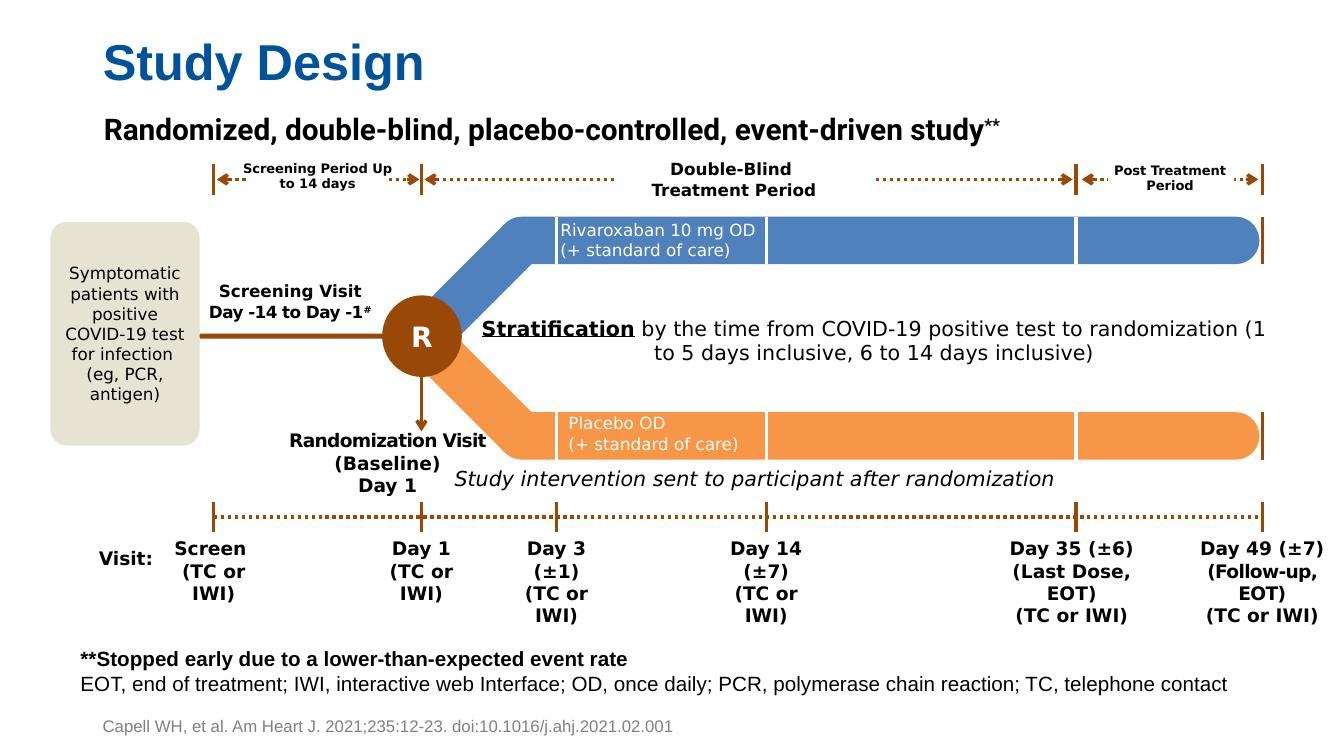
"""Build the study design slide."""
from dataclasses import dataclass
from typing import NamedTuple

from lxml.etree import SubElement as Sub
from pptx import Presentation
from pptx.dml.color import RGBColor
from pptx.enum.dml import MSO_LINE as Dash
from pptx.enum.shapes import MSO_CONNECTOR as Conn, MSO_SHAPE as Form
from pptx.enum.text import MSO_ANCHOR as Anchor, MSO_AUTO_SIZE as Fit, PP_ALIGN as Align
from pptx.oxml.ns import qn
from pptx.shapes.autoshape import Shape
from pptx.slide import Slide
from pptx.text.text import TextFrame
from pptx.util import Inches, Pt

BLACK = RGBColor(0x00, 0x00, 0x00)
WHITE = RGBColor(0xFF, 0xFF, 0xFF)
NAVY = RGBColor(0x00, 0x53, 0x9B)
GRAY = RGBColor(0x80, 0x80, 0x80)
BROWN = RGBColor(0x98, 0x48, 0x07)
BLUE = RGBColor(0x4F, 0x81, 0xBD)
ORANGE = RGBColor(0xF7, 0x96, 0x46)
SAND = RGBColor(0xE6, 0xE3, 0xD2)
SANS, ARIAL, ROBOTO = "DejaVu Sans", "Arial", "Roboto"
MID, LEFT = Align.CENTER, Align.LEFT

SCREEN, DAY1, DAY3, DAY14, DAY35, DAY49 = 2.12, 4.18, 5.52, 7.6, 10.67, 12.52
TICK, BAR = 0.3, 0.47


class Area(NamedTuple):
    left: float
    top: float
    width: float
    height: float


class Bit(NamedTuple):
    text: str
    bold: bool = False
    under: bool = False
    slant: bool = False
    space: float = 0
    lift: int = 0


@dataclass
class Style:
    size: float
    font: str = SANS
    color: RGBColor = BLACK
    align: Align = MID


@dataclass
class Note:
    area: Area
    style: Style
    rows: list[list[Bit]]


@dataclass
class Phase:
    start: float
    end: float
    mask: Area
    note: Note


@dataclass
class Arm:
    top: float
    slant_top: float
    angle: int
    color: RGBColor


def bold(*rows: str) -> list[list[Bit]]:
    return [[Bit(row, bold=True)] for row in rows]


def plain(*rows: str) -> list[list[Bit]]:
    return [[Bit(row)] for row in rows]


def write(frame: TextFrame, style: Style, rows: list[list[Bit]]) -> None:
    for index, row in enumerate(rows):
        para = frame.add_paragraph() if index else frame.paragraphs[0]
        para.alignment = style.align
        for bit in row:
            run = para.add_run()
            run.text = bit.text
            font = run.font
            font.name, font.size = style.font, Pt(style.size)
            font.color.rgb = style.color
            font.bold, font.italic, font.underline = bit.bold, bit.slant, bit.under
            props = run._r.get_or_add_rPr()
            if bit.space:
                props.set("spc", str(round(bit.space * 100)))
            if bit.lift:
                props.set("baseline", str(bit.lift * 1000))


def add_note(slide: Slide, note: Note) -> TextFrame:
    frame = slide.shapes.add_textbox(*map(Inches, note.area)).text_frame
    frame.word_wrap = True
    write(frame, note.style, note.rows)
    return frame


def add_form(slide: Slide, area: Area, fill: RGBColor,
             form: Form = Form.ROUNDED_RECTANGLE, curve: float = 0.5) -> Shape:
    shape = slide.shapes.add_shape(form, *map(Inches, area))
    shape.shadow.inherit = False
    shape.fill.solid()
    shape.fill.fore_color.rgb = fill
    shape.line.fill.background()
    if form == Form.ROUNDED_RECTANGLE:
        shape.adjustments[0] = curve
    shape.text_frame.vertical_anchor = Anchor.MIDDLE
    return shape


def add_line(slide: Slide, x1: float, y1: float, x2: float, y2: float,
             color: RGBColor = BROWN, dots: bool = False, ends: tuple[str, ...] = ()) -> None:
    link = slide.shapes.add_connector(Conn.STRAIGHT, *map(Inches, (x1, y1, x2, y2)))
    link.line.color.rgb = color
    link.line.width = Pt(2.5)
    if dots:
        link.line.dash_style = Dash.ROUND_DOT
        link.line._ln.find(qn("a:prstDash")).set("val", "sysDot")
    for end in ends:
        Sub(link.line._ln, qn(f"a:{end}"), type="arrow")
    Sub(link._element.spPr, qn("a:effectLst"))


LABEL, VISIT, SMALL = Style(12), Style(13.3), Style(9.3)
ARM_TEXT = Style(12, color=WHITE, align=LEFT)
IWI = "(TC or IWI)"

ARMS = [Arm(4.09, 3.69, 45, ORANGE), Arm(2.15, 2.55, 315, BLUE)]

PHASES = [
    Phase(2.15, 4.16, Area(2.47, 1.56, 1.39, 0.43),
          Note(Area(2.31, 1.54, 1.68, 0.41), SMALL, bold("Screening Period Up to 14 days"))),
    Phase(4.21, 10.64, Area(6.11, 1.58, 2.58, 0.43),
          Note(Area(5.89, 1.53, 2.78, 0.5), LABEL, bold("Double-Blind ", "Treatment Period"))),
    Phase(10.73, 12.48, Area(10.99, 1.53, 1.25, 0.43),
          Note(Area(10.88, 1.56, 1.45, 0.41), SMALL, bold("Post Treatment Period"))),
]

VISITS = [
    (SCREEN, 1.2, bold("Screen ", IWI)),
    (DAY1, 1.2, bold("Day 1", IWI)),
    (DAY3, 1.2, bold("Day 3 (±1)", IWI)),
    (DAY14, 1.2, bold("Day 14 (±7)", IWI)),
    (10.63, 1.76, bold("Day 35 (±6)", "(Last Dose, EOT)", IWI)),
    (DAY49, 1.6, [[Bit("Day 49 (±7)", True)],
                  [Bit("(Follow-up, EOT)", True, space=-0.5)], [Bit(IWI, True)]]),
]

NOTES = [
    Note(Area(5.46, 2.13, 4.8, 0.5), ARM_TEXT,
         plain("Rivaroxaban 10 mg OD", "(+ standard of care)")),
    Note(Area(5.54, 4.05, 2.36, 0.5), ARM_TEXT, plain("Placebo OD", "(+ standard of care)")),
    Note(Area(4.63, 3.08, 8.08, 0.59), Style(14.7),
         [[Bit("Stratification", True, True),
           Bit(" by the time from COVID-19 positive test to randomization "
               "(1 to 5 days inclusive, 6 to 14 days inclusive)")]]),
    Note(Area(2.31, 4.21, 3.07, 0.77), VISIT,
         [[Bit("Randomization Visit ", True, space=-0.5), Bit("(Baseline)", True)],
          [Bit("Day 1", True)]]),
    Note(Area(1.91, 2.74, 1.94, 0.5), LABEL,
         [[Bit("Screening Visit", True)],
          [Bit("Day -14 to Day -1", True, space=-0.4), Bit("#", True, space=-0.4, lift=30)]]),
    Note(Area(0.8, 5.38, 0.9, 0.33), VISIT, bold("Visit:")),
    Note(Area(0.7, 6.36, 12.74, 0.59), Style(14.7, ARIAL, align=LEFT),
         [[Bit("**Stopped early due to a lower-than-expected event rate", True)],
          [Bit("EOT, end of treatment; IWI, interactive web Interface; OD, once daily; "
               "PCR, polymerase chain reaction; TC, telephone contact")]]),
    Note(Area(4.41, 4.57, 8.3, 0.35), Style(14.7, align=LEFT),
         [[Bit("Study intervention sent to participant after randomization", slant=True)]]),
]

HEAD = Note(Area(0.9, 1.07, 9.95, 0.47), Style(21.3, ROBOTO, align=LEFT),
            [[Bit("Randomized, double-blind, placebo-controlled, event-driven study", True),
              Bit("**", True, lift=30)]])
CITE = Note(Area(0.92, 6.95, 9.73, 0.4), Style(12, ARIAL, GRAY, LEFT),
            plain("Capell WH, et al. Am Heart J. 2021;235:12-23. doi:10.1016/j.ahj.2021.02.001"))


def add_heads(slide: Slide) -> None:
    title = slide.shapes.title
    title.left, title.top, title.width, title.height = map(Inches, (0.92, 0, 11.5, 0.96))
    frame = title.text_frame
    frame.auto_size, frame.vertical_anchor = Fit.NONE, Anchor.BOTTOM
    write(frame, Style(36, ARIAL, NAVY, LEFT), bold("Study Design"))
    frame.paragraphs[0].line_spacing = 0.9
    head = add_note(slide, HEAD)
    head.margin_left = head.margin_right = Inches(0.13)
    head.margin_top = head.margin_bottom = Inches(0.07)
    head.paragraphs[0].line_spacing = 0.9
    add_note(slide, CITE).vertical_anchor = Anchor.BOTTOM


def add_flow(slide: Slide) -> None:
    for arm in ARMS:
        add_form(slide, Area(4, arm.slant_top, 1.55, BAR), arm.color).rotation = arm.angle
        add_form(slide, Area(4.94, arm.top, 7.55, BAR), arm.color)
        for x in (DAY3, DAY14, DAY35, DAY49):
            add_line(slide, x, arm.top + BAR, x, arm.top, BROWN if x == DAY49 else WHITE)
    add_form(slide, Area(1.97, 3.31, 2.04, 0.05), BROWN)
    group = add_form(slide, Area(0.5, 2.2, 1.48, 2.22), SAND, curve=0.11).text_frame
    write(group, LABEL, plain("Symptomatic patients with positive COVID-19 test for infection ",
                              "(eg, PCR, antigen)"))
    node = add_form(slide, Area(3.79, 2.93, 0.79, 0.81), BROWN, Form.OVAL).text_frame
    node.word_wrap = False
    write(node, Style(20, color=WHITE), bold("R"))
    add_line(slide, DAY1, 3.74, DAY1, 4.28, ends=("tailEnd",))


def add_times(slide: Slide) -> None:
    add_line(slide, SCREEN, 5.13, DAY49, 5.13, dots=True)
    for x in (SCREEN, DAY1, DAY3, DAY14, DAY35, DAY49):
        add_line(slide, x, 4.98 + TICK, x, 4.98)
    for x in (SCREEN, DAY1, DAY35, DAY49):
        add_line(slide, x, 1.63 + TICK, x, 1.63)
    for phase in PHASES:
        add_line(slide, phase.start, 1.78, phase.end, 1.78, dots=True,
                 ends=("headEnd", "tailEnd"))
        add_form(slide, phase.mask, WHITE, curve=0.11)
        add_note(slide, phase.note)
    for x, width, rows in VISITS:
        add_note(slide, Note(Area(x - width / 2, 5.28, width, 1), VISIT, rows))


def main() -> None:
    deck = Presentation()
    deck.slide_width, deck.slide_height = Inches(13.33), Inches(7.5)
    slide = deck.slides.add_slide(deck.slide_layouts[5])
    add_heads(slide)
    add_flow(slide)
    add_times(slide)
    for note in NOTES:
        add_note(slide, note)
    deck.save("out.pptx")


if __name__ == "__main__":
    main()
